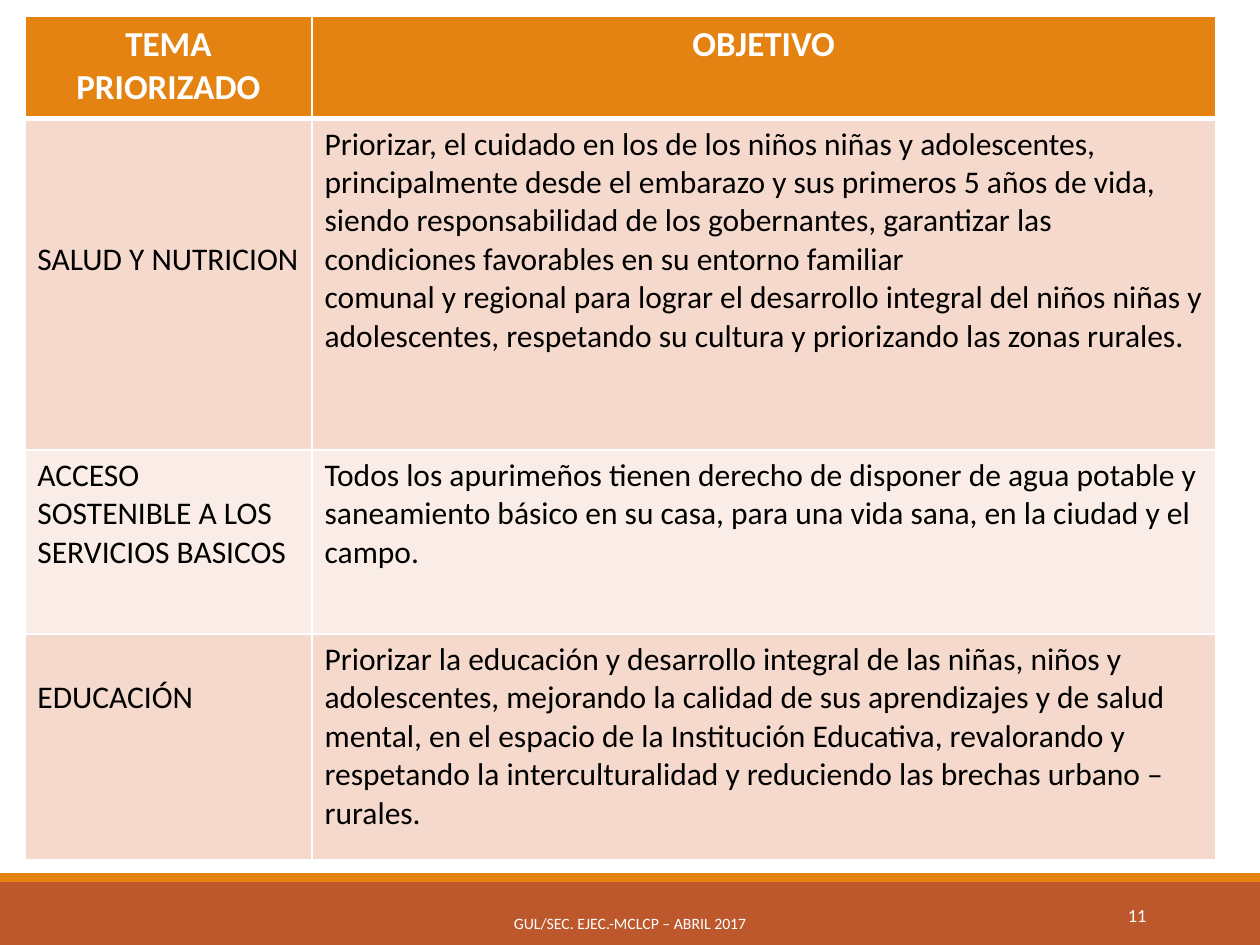
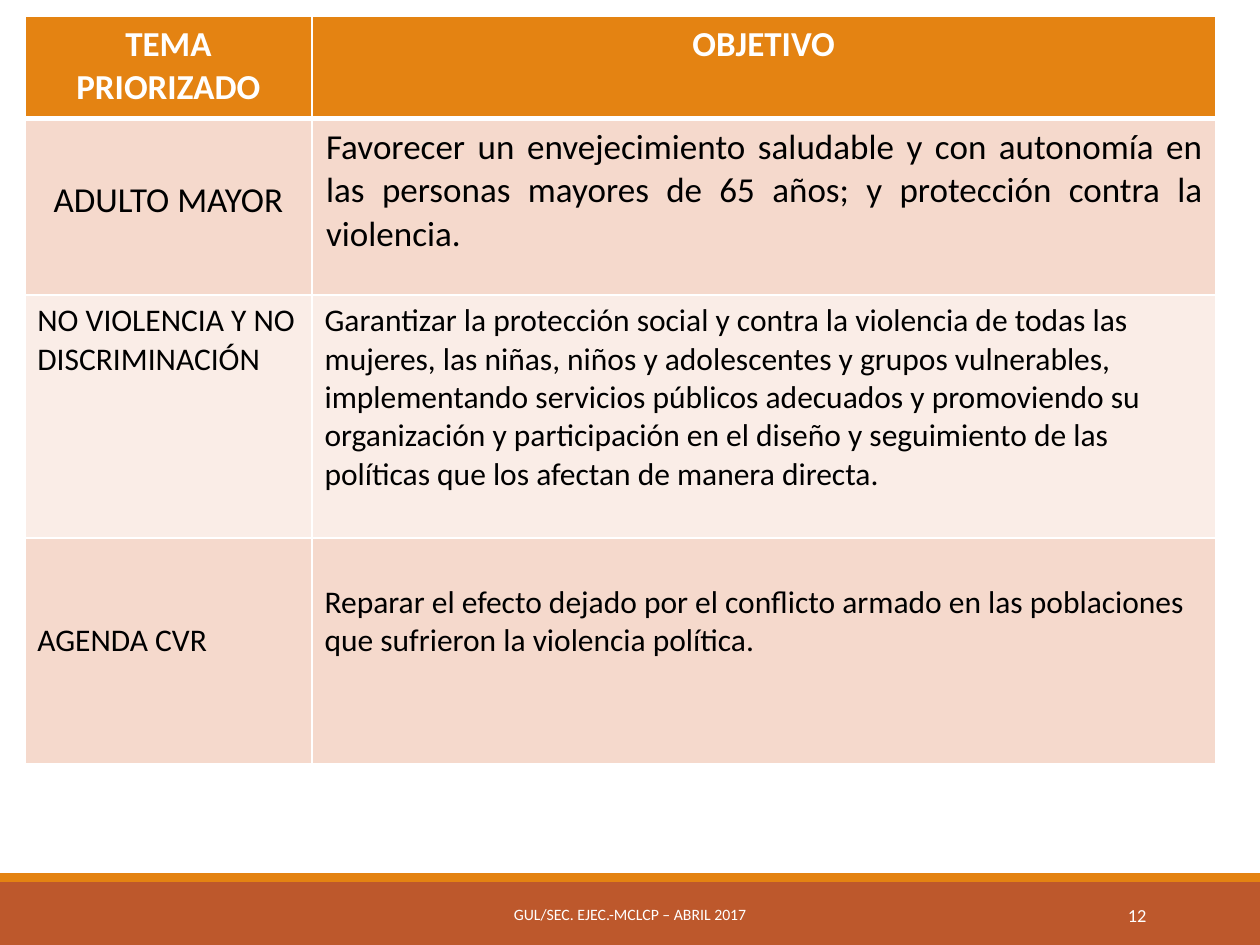
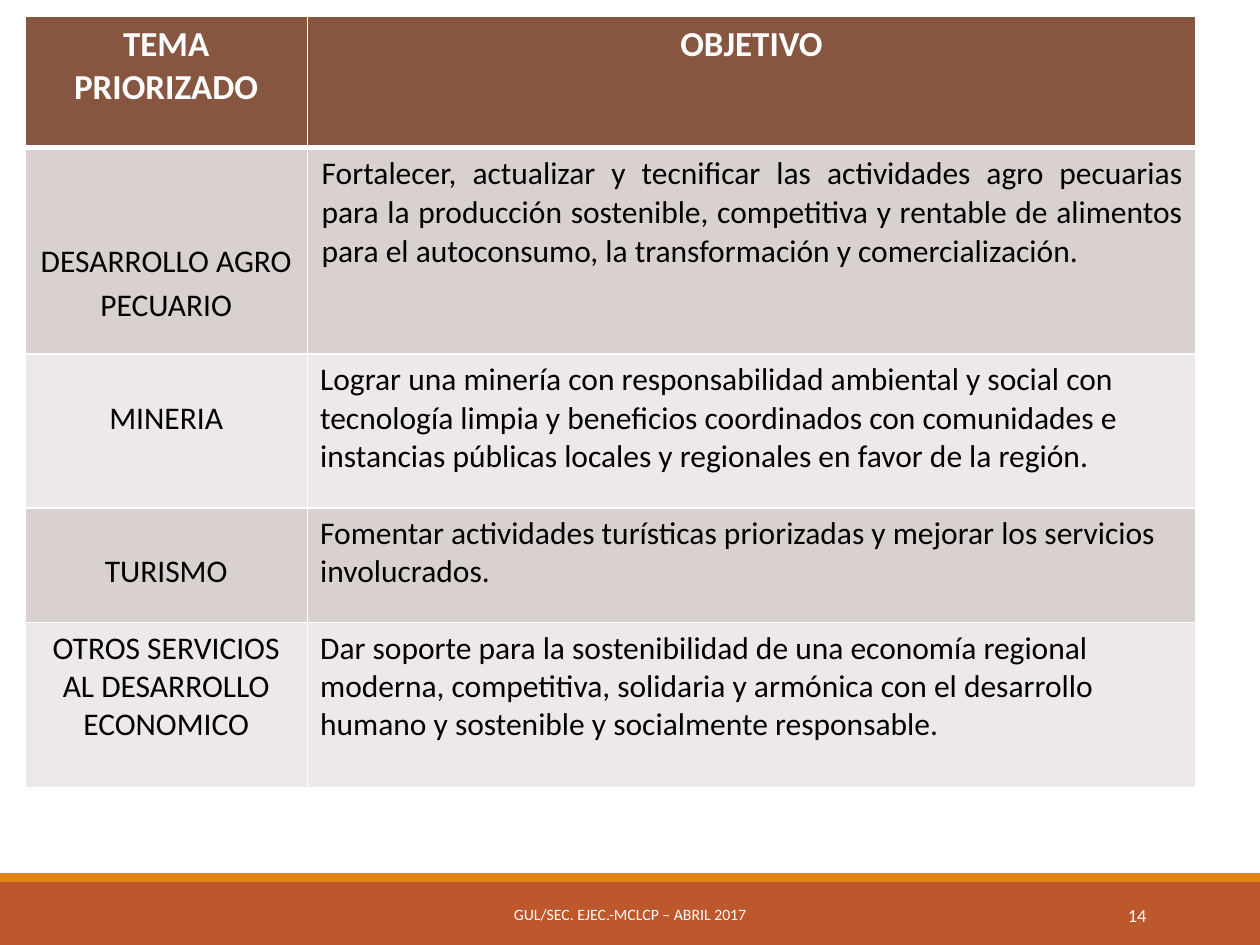
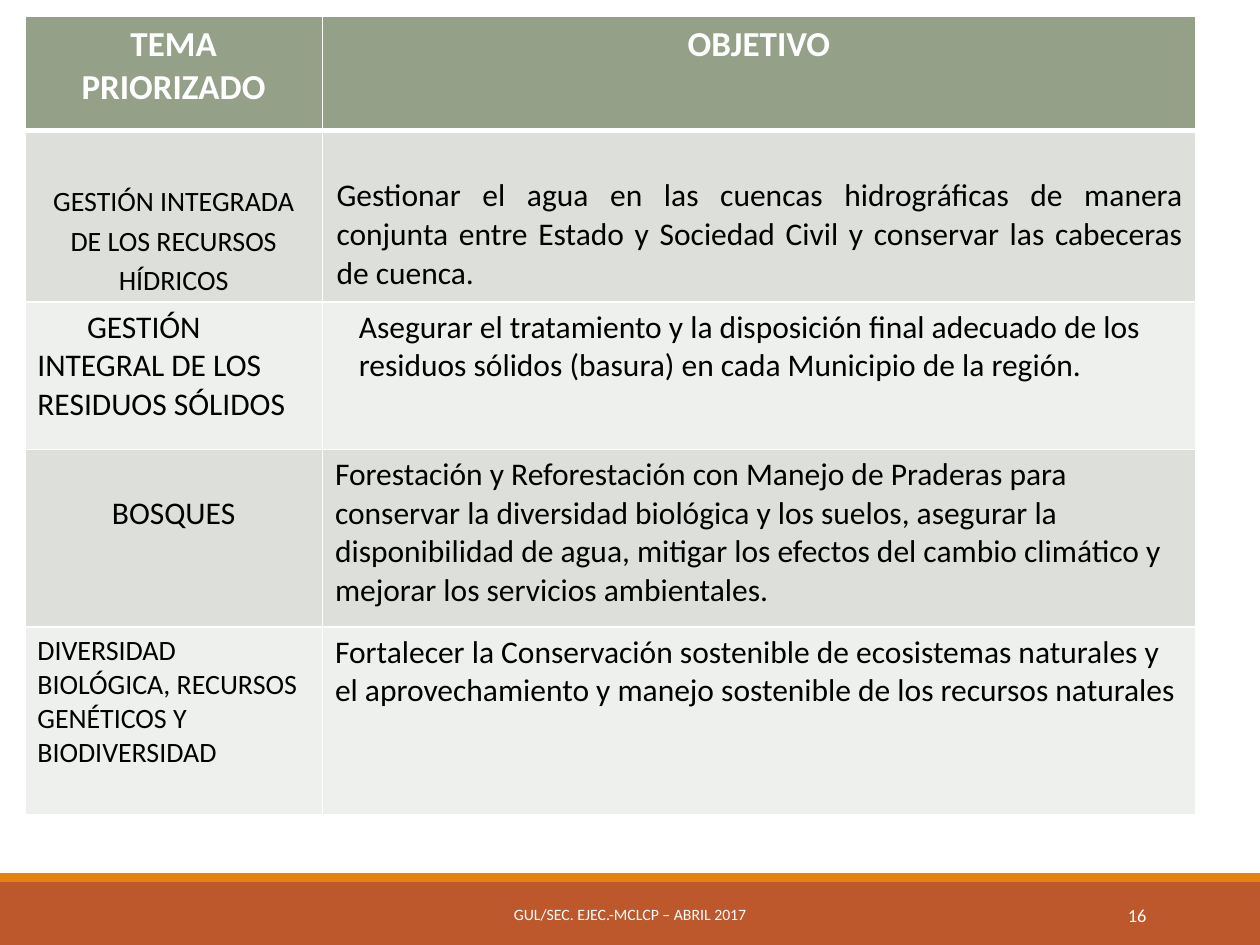
from dataclasses import dataclass

from lxml.etree import SubElement
from pptx import Presentation
from pptx.dml.color import RGBColor
from pptx.enum.shapes import MSO_SHAPE
from pptx.enum.text import MSO_ANCHOR, PP_ALIGN
from pptx.oxml.ns import qn
from pptx.util import Cm, Pt


@dataclass(frozen=True)
class Theme:
    font: str = "Calibri"
    white: str = "FFFFFF"
    black: str = "000000"
    rust: str = "BD582C"
    orange: str = "E48312"
    # Table palettes: header, odd rows, even rows
    warm: tuple = ("E48312", "F5D9CC", "FAEDE7")
    brown: tuple = ("865640", "D9D1CF", "EDE9E8")
    green: tuple = ("94A088", "DCDFDA", "EEF0ED")
    heading: float = 20
    body: float = 18
    small: float = 16
    number: float = 10.5
    footer: float = 9


@dataclass(frozen=True)
class Entry:
    """Text of one cell; gap is the space above it, in body lines."""
    text: str
    size: float = Theme.body
    align: PP_ALIGN = PP_ALIGN.LEFT
    gap: float = 0
    spacing: float = 1
    left: float = 0
    first: float = 0
    color: str = Theme.black
    bold: bool = False


T = Theme()
CENTER, JUSTIFY = PP_ALIGN.CENTER, PP_ALIGN.JUSTIFY
SLIDE_W, SLIDE_H = 25.4, 19.05
TABLE_LEFT, TABLE_TOP = 0.5, 0.33
BODY_LINE = 0.775
CELL_PAD = 0.13
FOOTER = "GUL/SEC. EJEC.-MCLCP – ABRIL 2017"
HEADINGS = [Entry(text, T.heading, CENTER, color=T.white, bold=True)
            for text in ("TEMA PRIORIZADO", "OBJETIVO")]


def style(p, size, color, align, bold=False):
    p.alignment = align
    p.font.name = T.font
    p.font.size = Pt(size)
    p.font.bold = bold
    p.font.color.rgb = RGBColor.from_string(color)


def add_band(slide, top, height, color):
    sp = slide.shapes.add_shape(MSO_SHAPE.RECTANGLE, 0, Cm(top), Cm(SLIDE_W), Cm(height))
    sp.shadow.inherit = False
    sp.fill.solid()
    sp.fill.fore_color.rgb = RGBColor.from_string(color)
    sp.line.fill.background()


def add_label(slide, box, text, size, align):
    tf = slide.shapes.add_textbox(*map(Cm, box)).text_frame
    tf.word_wrap = True
    tf.vertical_anchor = MSO_ANCHOR.MIDDLE
    p = tf.paragraphs[0]
    p.text = text
    style(p, size, T.white, align)


def add_footer(slide, number, text_top):
    # Bands along the bottom edge
    add_band(slide, 17.78, SLIDE_H - 17.78, T.rust)
    add_band(slide, 17.6, 0.18, T.orange)
    # Slide number and footer text
    add_label(slide, (20.62, 17.93, 2.74, 1.02), str(number), T.number, PP_ALIGN.RIGHT)
    add_label(slide, (7.67, text_top, 10.06, 1.02), FOOTER, T.footer, CENTER)


def set_borders(cell, widths):
    """Draw white borders; widths are points for left, right, top, bottom."""
    tcPr = cell._tc.get_or_add_tcPr()
    for i, (side, width) in enumerate(zip(("lnL", "lnR", "lnT", "lnB"), widths)):
        ln = tcPr.makeelement(qn(f"a:{side}"), {"w": str(Pt(width))})
        fill = SubElement(ln, qn("a:solidFill"))
        SubElement(fill, qn("a:srgbClr"), val=T.white)
        tcPr.insert(i, ln)


def fill_cell(cell, entry, color):
    cell.fill.solid()
    cell.fill.fore_color.rgb = RGBColor.from_string(color)
    cell.margin_top = Cm(CELL_PAD + entry.gap * BODY_LINE)
    p = cell.text_frame.paragraphs[0]
    p.text = entry.text
    style(p, entry.size, entry.color, entry.align, entry.bold)
    p.line_spacing = entry.spacing
    if entry.left or entry.first:
        pPr = p._p.get_or_add_pPr()
        pPr.set("marL", str(Cm(entry.left)))
        pPr.set("indent", str(Cm(entry.first)))


def add_topic_table(slide, left, top, widths, heights, palette, topics):
    rows = [HEADINGS, *topics]
    frame = slide.shapes.add_table(len(rows), len(widths), Cm(left), Cm(top),
                                   Cm(sum(widths)), Cm(sum(heights)))
    table = frame.table
    table.first_row = table.horz_banding = False
    for column, width in zip(table.columns, widths):
        column.width = Cm(width)
    for i, (entries, height) in enumerate(zip(rows, heights)):
        table.rows[i].height = Cm(height)
        color = palette[0] if i == 0 else palette[2 - i % 2]
        for j, entry in enumerate(entries):
            cell = table.cell(i, j)
            fill_cell(cell, entry, color)
            set_borders(cell, (1, 1, 3 if i == 1 else 1, 3 if i == 0 else 1))


SOCIAL = [
    (Entry("SALUD Y NUTRICION", gap=3),
     Entry("Priorizar, el cuidado en los de los niños niñas y adolescentes, principalmente "
           "desde el embarazo y sus primeros 5 años de vida, siendo responsabilidad de los "
           "gobernantes, garantizar las condiciones favorables en su entorno familiar\n"
           "comunal y regional para lograr el desarrollo integral del niños niñas y "
           "adolescentes, respetando su cultura y priorizando las zonas rurales.")),
    (Entry("ACCESO SOSTENIBLE A LOS SERVICIOS BASICOS"),
     Entry("Todos los apurimeños tienen derecho de disponer de agua potable y saneamiento "
           "básico en su casa, para una vida sana, en la ciudad y el campo.")),
    (Entry("EDUCACIÓN", gap=1),
     Entry("Priorizar la educación y desarrollo integral de las niñas, niños y adolescentes, "
           "mejorando la calidad de sus aprendizajes y de salud mental, en el espacio de la "
           "Institución Educativa, revalorando y respetando la interculturalidad y reduciendo "
           "las brechas urbano – rurales.")),
]

PROTECTION = [
    (Entry("ADULTO MAYOR", T.heading, CENTER, gap=1.25, spacing=1.15),
     Entry("Favorecer un envejecimiento saludable y con autonomía en las personas mayores de "
           "65 años; y protección contra la violencia.",
           T.heading, JUSTIFY, spacing=1.02, left=0.03)),
    (Entry("NO VIOLENCIA Y NO DISCRIMINACIÓN"),
     Entry("Garantizar la protección social y contra la violencia de todas las mujeres, las "
           "niñas, niños y adolescentes y grupos vulnerables, implementando servicios públicos "
           "adecuados y promoviendo su organización y participación en el diseño y seguimiento "
           "de las políticas que los afectan de manera directa.")),
    (Entry("AGENDA CVR", gap=2),
     Entry("Reparar el efecto dejado por el conflicto armado en las poblaciones que sufrieron "
           "la violencia política.", gap=1)),
]

ECONOMY = [
    (Entry("DESARROLLO AGRO PECUARIO", align=CENTER, gap=2.15, spacing=1.15),
     Entry("Fortalecer, actualizar y tecnificar las actividades agro pecuarias para la "
           "producción sostenible, competitiva y rentable de alimentos para el autoconsumo, "
           "la transformación y comercialización.",
           align=JUSTIFY, spacing=1.02, left=0.03)),
    (Entry("MINERIA", align=CENTER, gap=1),
     Entry("Lograr una minería con responsabilidad ambiental y social con tecnología limpia y "
           "beneficios coordinados con comunidades e instancias públicas locales y regionales "
           "en favor de la región.")),
    (Entry("TURISMO", align=CENTER, gap=1),
     Entry("Fomentar actividades turísticas priorizadas y mejorar los servicios "
           "involucrados.")),
    (Entry("OTROS SERVICIOS AL DESARROLLO ECONOMICO", align=CENTER),
     Entry("Dar soporte para la sostenibilidad de una economía regional moderna, competitiva, "
           "solidaria y armónica con el desarrollo humano y sostenible y socialmente "
           "responsable.")),
]

ENVIRONMENT = [
    (Entry("GESTIÓN INTEGRADA DE LOS RECURSOS HÍDRICOS", T.small, CENTER,
           gap=1.12, spacing=1.15),
     Entry("Gestionar el agua en las cuencas hidrográficas de manera conjunta entre Estado y "
           "Sociedad Civil y conservar las cabeceras de cuenca.",
           align=JUSTIFY, gap=1, spacing=1.02, left=0.03)),
    (Entry("GESTIÓN INTEGRAL DE LOS RESIDUOS SÓLIDOS", first=1),
     Entry("Asegurar el tratamiento y la disposición final adecuado de los residuos sólidos "
           "(basura) en cada Municipio de la región.", left=0.48)),
    (Entry("BOSQUES", align=CENTER, gap=1),
     Entry("Forestación y Reforestación con Manejo de Praderas para conservar la diversidad "
           "biológica y los suelos, asegurar la disponibilidad de agua, mitigar los efectos "
           "del cambio climático y mejorar los servicios ambientales.")),
    (Entry("DIVERSIDAD BIOLÓGICA, RECURSOS GENÉTICOS Y BIODIVERSIDAD", T.small),
     Entry("Fortalecer la Conservación sostenible de ecosistemas naturales y el "
           "aprovechamiento y manejo sostenible de los recursos naturales")),
]

# Slide number, footer text top, column widths, row heights, palette, topics
SLIDES = [
    (11, 18.11, (5.79, 18.21), (2.06, 6.68, 3.71, 4.55), T.warm, SOCIAL),
    (12, 17.93, (5.79, 18.21), (2.06, 3.56, 4.9, 4.55), T.warm, PROTECTION),
    (14, 17.93, (5.7, 17.9), (2.64, 4.17, 3.1, 2.31, 3.33), T.brown, ECONOMY),
    (16, 17.93, (6, 17.6), (2.3, 3.43, 2.97, 3.58, 3.78), T.green, ENVIRONMENT),
]


def main():
    prs = Presentation()
    prs.slide_width, prs.slide_height = Cm(SLIDE_W), Cm(SLIDE_H)
    for number, footer_top, widths, heights, palette, topics in SLIDES:
        slide = prs.slides.add_slide(prs.slide_layouts[6])
        add_footer(slide, number, footer_top)
        add_topic_table(slide, TABLE_LEFT, TABLE_TOP, widths, heights, palette, topics)
    prs.save("out.pptx")


if __name__ == "__main__":
    main()
